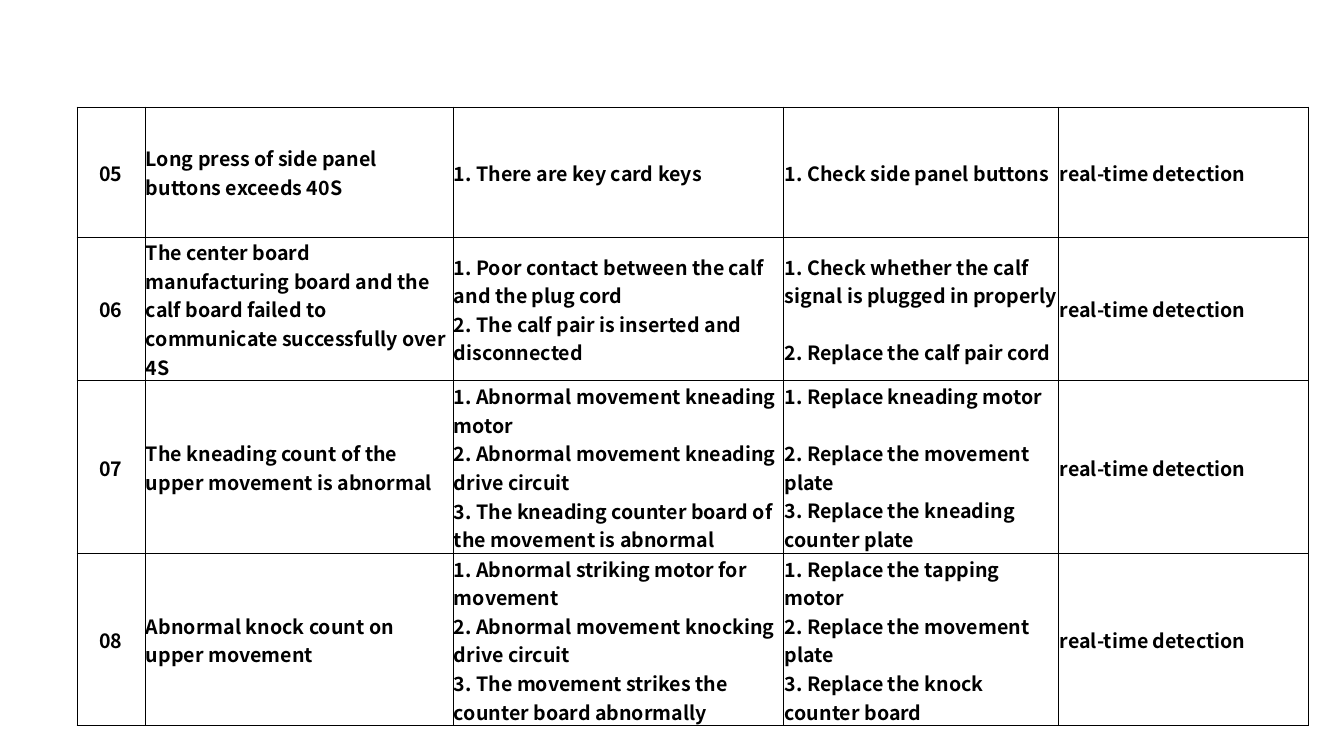
from dataclasses import dataclass

from lxml import etree
from pptx import Presentation
from pptx import util as u
from pptx.dml import color
from pptx.enum import text
from pptx.oxml import ns

TIMING = "real-time detection"
FAULTS = [
    ("05", ["Long press of side panel buttons exceeds 40S"],
     ["1. There are key card keys"],
     ["1. Check side panel buttons"]),
    ("06", ["The center board manufacturing board and the calf board failed to communicate successfully over 4S"],
     ["1. Poor contact between the calf and the plug cord",
      "2. The calf pair is inserted and disconnected"],
     ["1. Check whether the calf signal is plugged in properly",
      "2. Replace the calf pair cord"]),
    ("07", ["The kneading count of the upper movement is abnormal"],
     ["1. Abnormal movement kneading motor",
      "2. Abnormal movement kneading drive circuit",
      "3. The kneading counter board of the movement is abnormal"],
     ["1. Replace kneading motor",
      "2. Replace the movement plate",
      "3. Replace the kneading counter plate"]),
    ("08", ["Abnormal knock count on upper movement"],
     ["1. Abnormal striking motor for movement",
      "2. Abnormal movement knocking drive circuit",
      "3. The movement strikes the counter board abnormally"],
     ["1. Replace the tapping motor",
      "2. Replace the movement plate",
      "3. Replace the knock counter board"]),
]
REMEDY_COLUMN = 3
SPACED_REMEDIES = {"06", "07"}

PAGE = (1344, 756)
TABLE_AT = (77, 107)
COLUMNS = [68, 308, 331, 275, 250]
ROWS = [130, 143, 172, 172]


@dataclass(frozen=True)
class Theme:
    font: str = "Noto Sans CJK SC"
    size: float = 14
    ink: str = "000000"
    border: float = 0.75
    item_gap: float = 20.3


THEME = Theme()


def px(length):
    return u.Emu(round(length * 914400 / 100.8))


def add_borders(cell):
    properties = cell._tc.get_or_add_tcPr()
    for index, side in enumerate(("lnL", "lnR", "lnT", "lnB")):
        line = etree.Element(ns.qn(f"a:{side}"), w=str(u.Pt(THEME.border)))
        fill = etree.SubElement(line, ns.qn("a:solidFill"))
        etree.SubElement(fill, ns.qn("a:srgbClr"), val=THEME.ink)
        properties.insert(index, line)


def fill_cell(cell, items, align, item_gap):
    cell.fill.background()
    add_borders(cell)
    cell.vertical_anchor = text.MSO_ANCHOR.MIDDLE
    cell.margin_left = cell.margin_right = cell.margin_top = px(1)
    cell.margin_bottom = 0
    frame = cell.text_frame
    for index, item in enumerate(items):
        para = frame.add_paragraph() if index else frame.paragraphs[0]
        para.alignment = align
        if index == 1 and item_gap:
            para.space_before = u.Pt(item_gap)
        span = para.add_run()
        span.text = item
        span.font.name = THEME.font
        span.font.size = u.Pt(THEME.size)
        span.font.bold = True
        span.font.color.rgb = color.RGBColor.from_string(THEME.ink)


def main():
    deck = Presentation()
    deck.slide_width, deck.slide_height = map(px, PAGE)
    page = deck.slides.add_slide(deck.slide_layouts[6])
    extent = (*TABLE_AT, sum(COLUMNS), sum(ROWS))
    table = page.shapes.add_table(len(ROWS), len(COLUMNS), *map(px, extent)).table
    table.first_row = table.horz_banding = False
    for column, width in zip(table.columns, COLUMNS):
        column.width = px(width)
    for row, height in zip(table.rows, ROWS):
        row.height = px(height)

    for row, (code, fault, causes, remedies) in zip(table.rows, FAULTS):
        contents = [[code], fault, causes, remedies, [TIMING]]
        for index, (cell, items) in enumerate(zip(row.cells, contents)):
            align = text.PP_ALIGN.LEFT if index else text.PP_ALIGN.CENTER
            spaced = index == REMEDY_COLUMN and code in SPACED_REMEDIES
            fill_cell(cell, items, align, THEME.item_gap if spaced else 0)

    deck.save("out.pptx")


if __name__ == "__main__":
    main()
